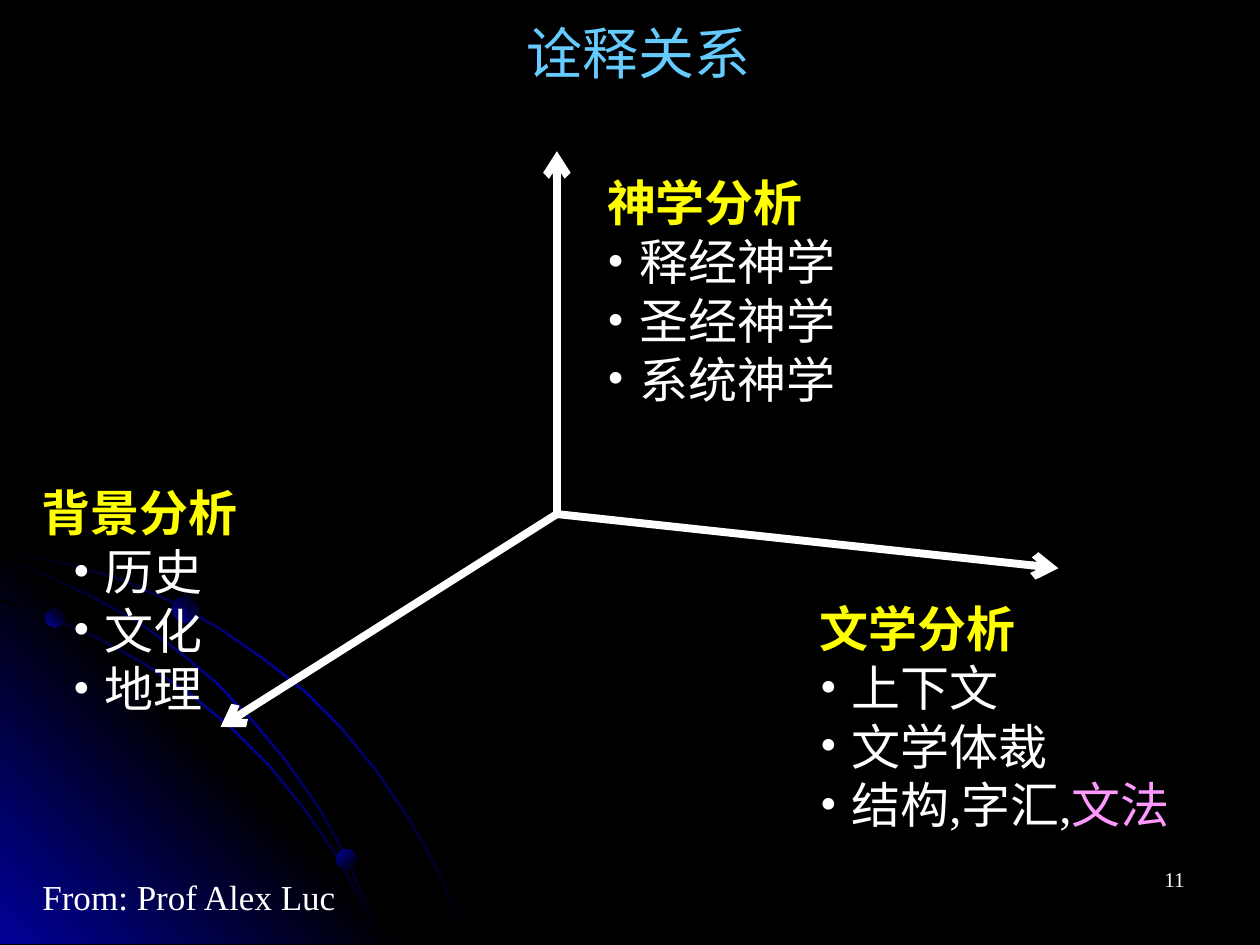
from lxml import etree
from pptx import Presentation
from pptx import util as u
from pptx.dml import color
from pptx.enum import shapes, text
from pptx.oxml import ns

SERIF = "Times New Roman"
BLACK, BLUE, WHITE = "000000", "010199", "FFFFFF"
YELLOW, PINK, SKY = "FFFF00", "FF99FF", "66CCFF"
BODY = {"size": u.Pt(28), "name": SERIF, "bold": False}
HEADING = {**BODY, "bold": True}

ARCS = [
    [(0, 4.38), (0.28, 4.43), (0.56, 4.49), (0.97, 4.61), (1.35, 4.78),
     (1.73, 4.99), (2.08, 5.23), (2.41, 5.49), (2.71, 5.79), (2.98, 6.12),
     (3.23, 6.49), (3.37, 6.73), (3.5, 6.98), (3.6, 7.23), (3.7, 7.49)],
    [(0, 4.77), (0.39, 4.9), (0.77, 5.07), (1.15, 5.28), (1.5, 5.51),
     (1.83, 5.78), (2.13, 6.08), (2.4, 6.41), (2.65, 6.77), (2.85, 7.14),
     (2.94, 7.32), (3.01, 7.49)],
    [(0, 4.44), (0.36, 4.57), (0.74, 4.75), (1.09, 4.94), (1.42, 5.18),
     (1.73, 5.44), (2.02, 5.75), (2.27, 6.05), (2.52, 6.41), (2.67, 6.67),
     (2.8, 6.94), (2.92, 7.22), (3.01, 7.49)],
]
ARC_WIDTH = 0.02


def rgb(value):
    return color.RGBColor.from_string(value)


def add_child(parent, tag, **attributes):
    child = etree.SubElement(parent, ns.qn(tag))
    for name, value in attributes.items():
        child.set(name, str(value))
    return child


def fill_gradient(shape, colours, angle):
    shape.shadow.inherit = False
    shape.line.fill.background()
    shape.fill.gradient()
    gradient = shape.fill._xPr.find(ns.qn("a:gradFill"))
    for child in list(gradient):
        gradient.remove(child)
    stops = add_child(gradient, "a:gsLst")
    for index, value in enumerate(colours):
        position = index * 100000 // (len(colours) - 1)
        stop = add_child(stops, "a:gs", pos=position)
        add_child(stop, "a:srgbClr", val=value)
    add_child(gradient, "a:lin", ang=angle * 60000, scaled=0)


def add_polygon(slide, points, colours, angle):
    corners = [(u.Inches(x), u.Inches(y)) for x, y in points]
    builder = slide.shapes.build_freeform(*corners[0])
    builder.add_line_segments(corners[1:], close=True)
    fill_gradient(builder.convert_to_shape(), colours, angle)


def add_arc(slide, inner):
    last = len(inner) - 1
    outer = [(x + ARC_WIDTH * i / last, y - ARC_WIDTH * (1 - i / last))
             for i, (x, y) in enumerate(inner)]
    add_polygon(slide, inner + outer[::-1], [BLACK, BLUE, BLACK], 45)


def add_dot(slide, left, top, size, angle):
    dot = slide.shapes.add_shape(
        shapes.MSO_SHAPE.OVAL, u.Inches(left), u.Inches(top),
        u.Inches(size), u.Inches(size))
    fill_gradient(dot, [BLUE, BLACK], angle)


def add_axis(slide, origin, tip):
    axis = slide.shapes.add_connector(
        shapes.MSO_CONNECTOR.STRAIGHT, *map(u.Inches, origin + tip))
    axis.line.width = u.Pt(4.5)
    axis.line.color.rgb = rgb(WHITE)
    add_child(axis.line._get_or_add_ln(), "a:tailEnd", type="arrow")
    add_child(axis._element.spPr, "a:effectLst")


def add_text_box(slide, box, wrap=True, grow=False):
    frame = slide.shapes.add_textbox(*map(u.Inches, box)).text_frame
    frame.word_wrap = wrap
    if grow:
        frame.auto_size = text.MSO_AUTO_SIZE.SHAPE_TO_FIT_TEXT
    return frame


def add_run(paragraph, words, colour, formats):
    run = paragraph.add_run()
    run.text = words
    run.font.color.rgb = rgb(colour)
    for name, value in formats.items():
        setattr(run.font, name, value)


def add_label(slide, box, words, size, colour, align, **frame_options):
    paragraph = add_text_box(slide, box, **frame_options).paragraphs[0]
    paragraph.alignment = align
    add_run(paragraph, words, colour, {"size": u.Pt(size), "name": SERIF})
    return paragraph


def set_bullet(paragraph, margin, hanging):
    properties = paragraph._p.get_or_add_pPr()
    properties.set("marL", str(u.Inches(margin)))
    properties.set("indent", str(-u.Inches(hanging)))
    add_child(properties, "a:buFont", typeface=SERIF)
    add_child(properties, "a:buChar", char="•")


def add_analysis(slide, box, heading, items, margin, hanging, font=SERIF):
    frame = add_text_box(slide, box, grow=True)
    add_run(frame.paragraphs[0], heading, YELLOW, {**HEADING, "name": font})
    for item in items:
        paragraph = frame.add_paragraph()
        set_bullet(paragraph, margin, hanging)
        add_run(paragraph, item, WHITE, BODY)
    return frame


def add_backdrop(slide):
    slide.background.fill.solid()
    slide.background.fill.fore_color.rgb = rgb(BLACK)
    add_arc(slide, ARCS[0])
    add_polygon(slide, [(0, 4.27), (3.22, 7.49), (0, 7.49)],
                [BLUE, BLACK, BLUE], 315)
    for arc in ARCS[1:]:
        add_arc(slide, arc)
    add_dot(slide, 0.36, 4.83, 0.15, 315)
    add_dot(slide, 2.67, 6.74, 0.16, 45)
    add_dot(slide, 1.37, 4.73, 0.21, 315)


def main():
    presentation = Presentation()
    presentation.slide_width = u.Inches(10)
    presentation.slide_height = u.Inches(7.5)
    slide = presentation.slides.add_slide(presentation.slide_layouts[6])
    add_backdrop(slide)

    align = text.PP_ALIGN
    add_label(slide, (7.17, 6.83, 2.33, 0.5), "11", 12, WHITE, align.RIGHT)
    title = add_label(slide, (0.78, 0.16, 8.58, 0.87), "诠释关系", 32, SKY,
                      align.CENTER)
    title.line_spacing = 0.9

    for tip in [(1.75, 5.77), (8.4, 4.51), (4.42, 1.2)]:
        add_axis(slide, (4.42, 4.08), tip)

    add_analysis(slide, (0.23, 3.78, 1.93, 1.99), "背景分析",
                 ["历史", "文化", "地理"], 0.5, 0.25)
    literary = add_analysis(slide, (6.41, 4.7, 3.34, 2.05), "文学分析",
                            ["上下文", "文学体裁", "结构,字汇,"], 0.25, 0.25)
    add_run(literary.paragraphs[-1], "文", PINK, {**BODY, "name": "Arial"})
    add_run(literary.paragraphs[-1], "法", PINK, BODY)
    add_analysis(slide, (4.72, 1.32, 2.64, 1.99), "神学分析",
                 ["释经神学", "圣经神学", "系统神学"], 0.26, 0.26, "Lato")
    add_label(slide, (0.23, 6.9, 2.54, 0.44), "From: Prof Alex Luc", 20,
              WHITE, align.CENTER, wrap=False, grow=True)
    presentation.save("out.pptx")


if __name__ == "__main__":
    main()
